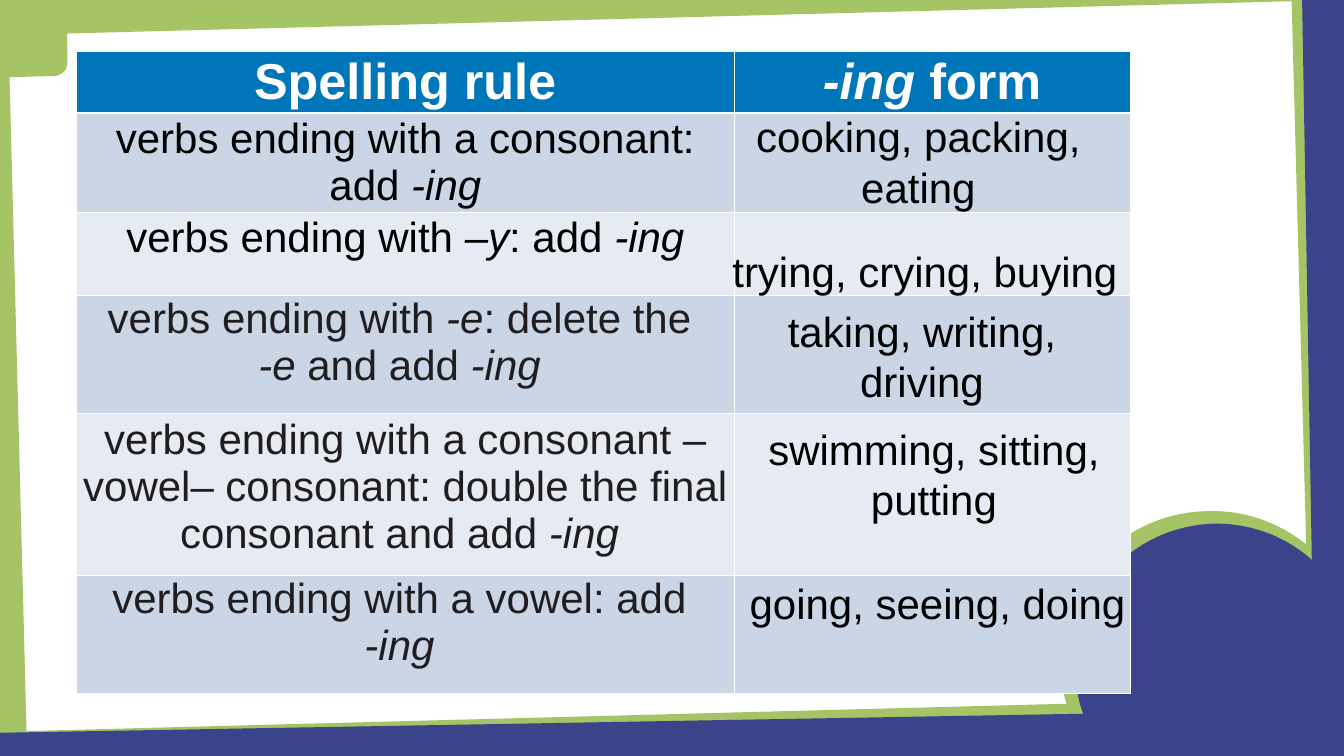
from dataclasses import dataclass

from lxml.etree import SubElement
from pptx import Presentation
from pptx.dml.color import RGBColor
from pptx.enum.text import MSO_ANCHOR, MSO_AUTO_SIZE, PP_ALIGN
from pptx.oxml.ns import qn
from pptx.util import Cm, Pt


@dataclass(frozen=True)
class Theme:
    font: str = "Arial"
    green: str = "A5C465"
    blue: str = "3B438B"
    header: str = "0076BA"
    bands: tuple = ("CAD5E6", "E6EBF3")
    white: str = "FFFFFF"
    black: str = "000000"
    ink: str = "211D1E"
    header_size: int = 72
    body_size: int = 60


THEME = Theme()
WIDTH, HEIGHT = 67.74, 38.1

# Outlines in cm: a pair is a corner, six numbers are a Bézier curve.
FRAME = [
    (THEME.green, [(60.91, 25.76), (58.95, 25.78, 57.02, 26.54, 55.55, 28.04),
                   (52.81, 30.86, 52.73, 35.26, 55.25, 38.2), (63.25, 38.05), (WIDTH, 37.97),
                   (67.69, 29.64), (67.34, 29.01, 66.88, 28.4, 66.32, 27.86),
                   (64.8, 26.42, 62.84, 25.7, 60.91, 25.76)]),
    (THEME.green, [(65.1, 0), (66.12, HEIGHT), (67.23, HEIGHT), (66.22, 0)]),
    (THEME.green, [(0, 0), (0, 3.86), (0.13, 3.89, 0.3, 3.89, 0.56, 3.89), (2.36, 3.84),
                   (2.67, 3.84, 2.87, 3.84, 2.97, 3.78), (3.15, 3.71, 3.3, 3.58, 3.35, 3.4),
                   (3.4, 3.28, 3.4, 3.07, 3.4, 2.77), (3.35, 0.36),
                   (3.35, 0.2, 3.35, 0.1, 3.35, 0)]),
    (THEME.green, [(0, 0), (0, 1.78), (67.46, 0)]),
    (THEME.green, [(WIDTH, 35.1), (0, 36.88), (0, 37.77), (WIDTH, 36.02)]),
    (THEME.green, [(0, 0), (0, HEIGHT), (1.37, HEIGHT), (0.38, 0)]),
    (THEME.blue, [(65.63, 0), (66.29, HEIGHT), (WIDTH, HEIGHT), (WIDTH, 0)]),
    (THEME.blue, [(WIDTH, 35.74), (0, 36.93), (0, HEIGHT), (WIDTH, HEIGHT)]),
    (THEME.blue, [(61.21, 26.39), (59.39, 26.44, 57.56, 27.15, 56.18, 28.58),
                  (53.62, 31.22, 53.52, 35.33, 55.8, HEIGHT), (67.03, 37.9),
                  (67.34, 37.49, 67.59, 37.06, WIDTH, 36.63), (67.69, 30.28),
                  (67.36, 29.62, 66.9, 28.98, 66.32, 28.4),
                  (64.9, 27.03, 63.04, 26.37, 61.21, 26.39)]),
]

# Rule, row height, text colour, (side, top) cell margins; asterisks mark italics.
WIDE, TIGHT = (0.25, 0.13), (0.13, 0)
RULES = [
    ("verbs ending with a consonant: add *-ing*", 4.19, THEME.black, WIDE),
    ("verbs ending with* –y*: add *-ing*", 4.19, THEME.black, WIDE),
    ("verbs ending with *-e*: delete the \n*-e *and add *-ing *", 5.97, THEME.ink, TIGHT),
    ("verbs ending with a consonant – vowel– consonant: double the final consonant "
     "and add *-ing *", 8.15, THEME.ink, WIDE),
    ("verbs ending with a vowel: add \n*-ing *", 5.97, THEME.ink, TIGHT),
]
# Words, then left, top, width and height from the corner of the table.
EXAMPLES = [
    ("cooking, packing, eating", 32.23, 2.82, 20.4, 5.41),
    ("trying, crying, buying", 32.41, 9.63, 20.7, 2.84),
    ("taking, writing, driving", 32.41, 12.62, 20.4, 5.41),
    ("swimming, sitting, putting", 32.56, 18.59, 21.31, 5.41),
    ("going, seeing, doing", 32.23, 26.37, 22.33, 2.84),
]


def rgb(value):
    return RGBColor.from_string(value)


def write(frame, text, *, size=THEME.body_size, color=THEME.black, bold=False):
    """Fill a text frame with centred lines; text between asterisks is italic."""
    for number, line in enumerate(text.split("\n")):
        paragraph = frame.add_paragraph() if number else frame.paragraphs[0]
        paragraph.alignment = PP_ALIGN.CENTER
        for index, part in enumerate(line.split("*")):
            if not part:
                continue
            run = paragraph.add_run()
            run.text = part
            font = run.font
            font.name, font.size = THEME.font, Pt(size)
            font.bold, font.italic = bold, index % 2 == 1
            font.color.rgb = rgb(color)


def curve_middle(start, curve):
    weighted = zip((1, 3, 3, 1), (start, curve[:2], curve[2:4], curve[4:]))
    terms = [(weight * x, weight * y) for weight, (x, y) in weighted]
    return tuple(sum(axis) / 8 for axis in zip(*terms))


def draw_outline(slide, left, top, color, outline):
    """Build the outline with two straight legs per curve, then bend each pair of legs."""
    points = [outline[0]]
    for part in outline[1:]:
        if len(part) == 6:
            points.append(curve_middle(points[-1], part))
        points.append(part[-2:])
    start, *rest = [(Cm(x), Cm(y)) for x, y in points]
    builder = slide.shapes.build_freeform(*start)
    builder.add_line_segments(rest, close=True)
    piece = builder.convert_to_shape(Cm(left), Cm(top))
    piece.shadow.inherit = False
    piece.fill.solid()
    piece.fill.fore_color.rgb = rgb(color)
    piece.line.fill.background()

    legs = iter(list(piece._element.iter(qn("a:lnTo"))))
    for part in outline[1:]:
        leg = next(legs)
        if len(part) == 2:
            continue
        parent, end = leg.getparent(), next(legs)
        bend = SubElement(parent, qn("a:cubicBezTo"))
        for x, y in zip(part[::2], part[1::2]):
            SubElement(bend, qn("a:pt"), x=str(Cm(left + x) - piece.left),
                       y=str(Cm(top + y) - piece.top))
        parent.replace(leg, bend)
        parent.remove(end)


def draw_frame(slide, left, top):
    for color, outline in FRAME:
        draw_outline(slide, left, top, color, outline)


def style_cell(cell, fill, bottom=1, margins=WIDE):
    properties = cell._tc.get_or_add_tcPr()
    for side, width in (("L", 1), ("R", 1), ("T", 1), ("B", bottom)):
        border = SubElement(properties, qn(f"a:ln{side}"), w=str(Pt(width)))
        solid = SubElement(border, qn("a:solidFill"))
        SubElement(solid, qn("a:srgbClr"), val=THEME.white)
    cell.fill.solid()
    cell.fill.fore_color.rgb = rgb(fill)
    cell.margin_left = cell.margin_right = Cm(margins[0])
    cell.margin_top = cell.margin_bottom = Cm(margins[1])


def draw_rules(slide, left, top, columns=(33.14, 19.96), header_height=2.59):
    heights = [header_height] + [height for _, height, _, _ in RULES]
    table = slide.shapes.add_table(len(heights), len(columns), Cm(left), Cm(top),
                                   Cm(sum(columns)), Cm(sum(heights))).table
    for column, width in zip(table.columns, columns):
        column.width = Cm(width)
    for row, height in zip(table.rows, heights):
        row.height = Cm(height)
    for cell, heading in zip(table.rows[0].cells, ("Spelling rule", "*-ing *form")):
        style_cell(cell, THEME.header, bottom=3)
        write(cell.text_frame, heading, size=THEME.header_size, color=THEME.white, bold=True)
    for number, (rule, _, color, margins) in enumerate(RULES):
        rule_cell, example_cell = table.rows[number + 1].cells
        fill = THEME.bands[number % 2]
        style_cell(rule_cell, fill, margins=margins)
        style_cell(example_cell, fill)
        write(rule_cell.text_frame, rule, color=color)


def draw_examples(slide, left, top):
    for words, x, y, width, height in EXAMPLES:
        frame = slide.shapes.add_textbox(Cm(left + x), Cm(top + y),
                                         Cm(width), Cm(height)).text_frame
        frame.word_wrap = True
        frame.auto_size = MSO_AUTO_SIZE.SHAPE_TO_FIT_TEXT
        frame.vertical_anchor = MSO_ANCHOR.MIDDLE
        frame.margin_left = frame.margin_right = Cm(0.15)
        frame.margin_top = frame.margin_bottom = Cm(0.15)
        write(frame, words)


def main():
    deck = Presentation()
    deck.slide_width, deck.slide_height = Cm(WIDTH), Cm(HEIGHT)
    slide = deck.slides.add_slide(deck.slide_layouts[6])
    draw_frame(slide, 0, 0)
    draw_rules(slide, 3.86, 2.59)
    draw_examples(slide, 3.86, 2.59)
    deck.save("out.pptx")


if __name__ == "__main__":
    main()
